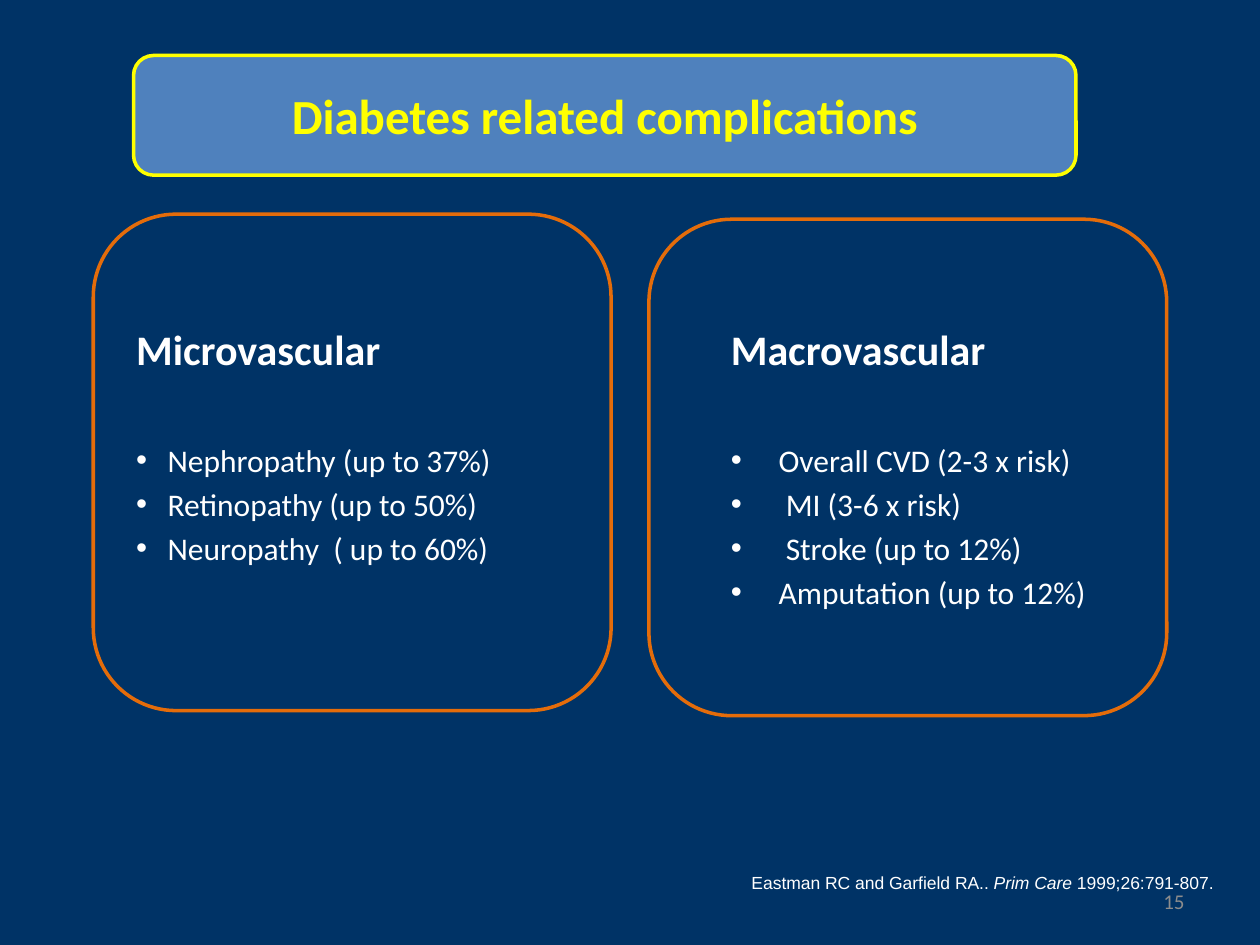
from dataclasses import dataclass

from lxml import etree
from pptx import Presentation, util as u
from pptx.dml.color import RGBColor
from pptx.enum import shapes, text
from pptx.oxml import ns

COLORS = {
    "background": "003366",
    "banner": "4F81BD",
    "highlight": "FFFF00",
    "frame": "E46C0A",
    "text": "FFFFFF",
    "number": "8C8C8C",
}


@dataclass
class Complication:
    heading: str
    items: list[str]
    text_left: float
    frame_left: float
    frame_top: float
    item_indent: float


COMPLICATIONS = [
    Complication(
        "Microvascular",
        ["Nephropathy (up to 37%)", "Retinopathy (up to 50%)", "Neuropathy  ( up to 60%)"],
        0.98, 0.74, 1.7, 0.25,
    ),
    Complication(
        "Macrovascular",
        ["Overall CVD (2-3 x risk)", " MI (3-6 x risk)", " Stroke (up to 12%)",
         "Amputation (up to 12%)"],
        5.7, 5.15, 1.74, 0.38,
    ),
]


def color(name: str) -> RGBColor:
    return RGBColor.from_string(COLORS[name])


def place(shape, left: float, top: float, width: float, height: float) -> None:
    shape.left, shape.top = u.Inches(left), u.Inches(top)
    shape.width, shape.height = u.Inches(width), u.Inches(height)


def format_runs(para, size: float, color_name: str, bold: bool = False,
                font: str = "Calibri") -> None:
    for span in para.runs:
        span.font.name = font
        span.font.size = u.Pt(size)
        span.font.bold = bold
        span.font.color.rgb = color(color_name)


def set_indent(para, inches: float, bullet: bool = True) -> None:
    """Hang the first line by the given indent, with or without a bullet."""
    properties = para._p.get_or_add_pPr()
    properties.set("marL", str(u.Inches(inches)))
    properties.set("indent", str(-u.Inches(inches)))
    if bullet:
        etree.SubElement(properties, ns.qn("a:buFont")).set("typeface", "Arial")
        etree.SubElement(properties, ns.qn("a:buChar")).set("char", "•")
    else:
        etree.SubElement(properties, ns.qn("a:buNone"))


def add_round_box(page, left: float, top: float, width: float, height: float,
                  line: str, fill: str | None = None) -> None:
    box = page.shapes.add_shape(
        shapes.MSO_SHAPE.ROUNDED_RECTANGLE,
        u.Inches(left), u.Inches(top), u.Inches(width), u.Inches(height))
    box.shadow.inherit = False
    box.line.color.rgb = color(line)
    box.line.width = u.Pt(2)
    if fill:
        box.fill.solid()
        box.fill.fore_color.rgb = color(fill)
    else:
        box.fill.background()


def add_right_text(page, left: float, top: float, width: float, height: float):
    """Add a right-aligned text box and return its frame and first paragraph."""
    box = page.shapes.add_textbox(
        u.Inches(left), u.Inches(top), u.Inches(width), u.Inches(height))
    frame = box.text_frame
    frame.word_wrap = True
    para = frame.paragraphs[0]
    para.alignment = text.PP_ALIGN.RIGHT
    return frame, para


def add_title(page) -> None:
    area = (1.06, 0.44, 7.48, 0.95)
    add_round_box(page, *area, line="highlight", fill="banner")
    title = page.shapes.title
    place(title, *area)
    frame = title.text_frame
    frame.text = "Diabetes related complications"
    frame.auto_size = text.MSO_AUTO_SIZE.NONE
    frame.vertical_anchor = text.MSO_ANCHOR.MIDDLE
    frame.paragraphs[0].alignment = text.PP_ALIGN.CENTER
    format_runs(frame.paragraphs[0], 28, "highlight", bold=True)
    # The title lies above its banner.
    page.shapes._spTree.append(title._element)


def add_complication(page, body, group: Complication) -> None:
    place(body, group.text_left, 2.52, 4.42, 4.95)
    frame = body.text_frame
    frame.text = "\n".join([group.heading, *group.items])
    frame.auto_size = text.MSO_AUTO_SIZE.NONE
    heading, *items = frame.paragraphs
    set_indent(heading, 0.25, bullet=False)
    format_runs(heading, 24, "text", bold=True)
    for para in items:
        set_indent(para, group.item_indent)
        format_runs(para, 18, "text")
    items[0].space_before = u.Pt(38)
    add_round_box(page, group.frame_left, group.frame_top, 4.11, 3.94, line="frame")


def add_citation(page) -> None:
    _, para = add_right_text(page, 2.4, 6.9, 7.33, 0.45)
    para.line_spacing = 0.85
    para.space_before = u.Pt(3.5)
    for words, italic in [("Eastman RC and Garfield RA.. ", False),
                          ("Prim Care", True),
                          (" 1999;26:791-807.", False)]:
        span = para.add_run()
        span.text = words
        span.font.italic = italic
    format_runs(para, 10, "text", font="Arial")


def add_page_number(page) -> None:
    frame, para = add_right_text(page, 7.17, 6.95, 2.33, 0.4)
    frame.vertical_anchor = text.MSO_ANCHOR.MIDDLE
    para.text = "15"
    format_runs(para, 12, "number")


def main() -> None:
    deck = Presentation()
    deck.slide_width, deck.slide_height = u.Inches(10), u.Inches(7.5)
    page = deck.slides.add_slide(deck.slide_layouts.get_by_name("Two Content"))
    page.background.fill.solid()
    page.background.fill.fore_color.rgb = color("background")

    _, *bodies = page.placeholders
    add_title(page)
    for body, group in zip(bodies, COMPLICATIONS):
        add_complication(page, body, group)
    add_citation(page)
    add_page_number(page)
    deck.save("out.pptx")


if __name__ == "__main__":
    main()
